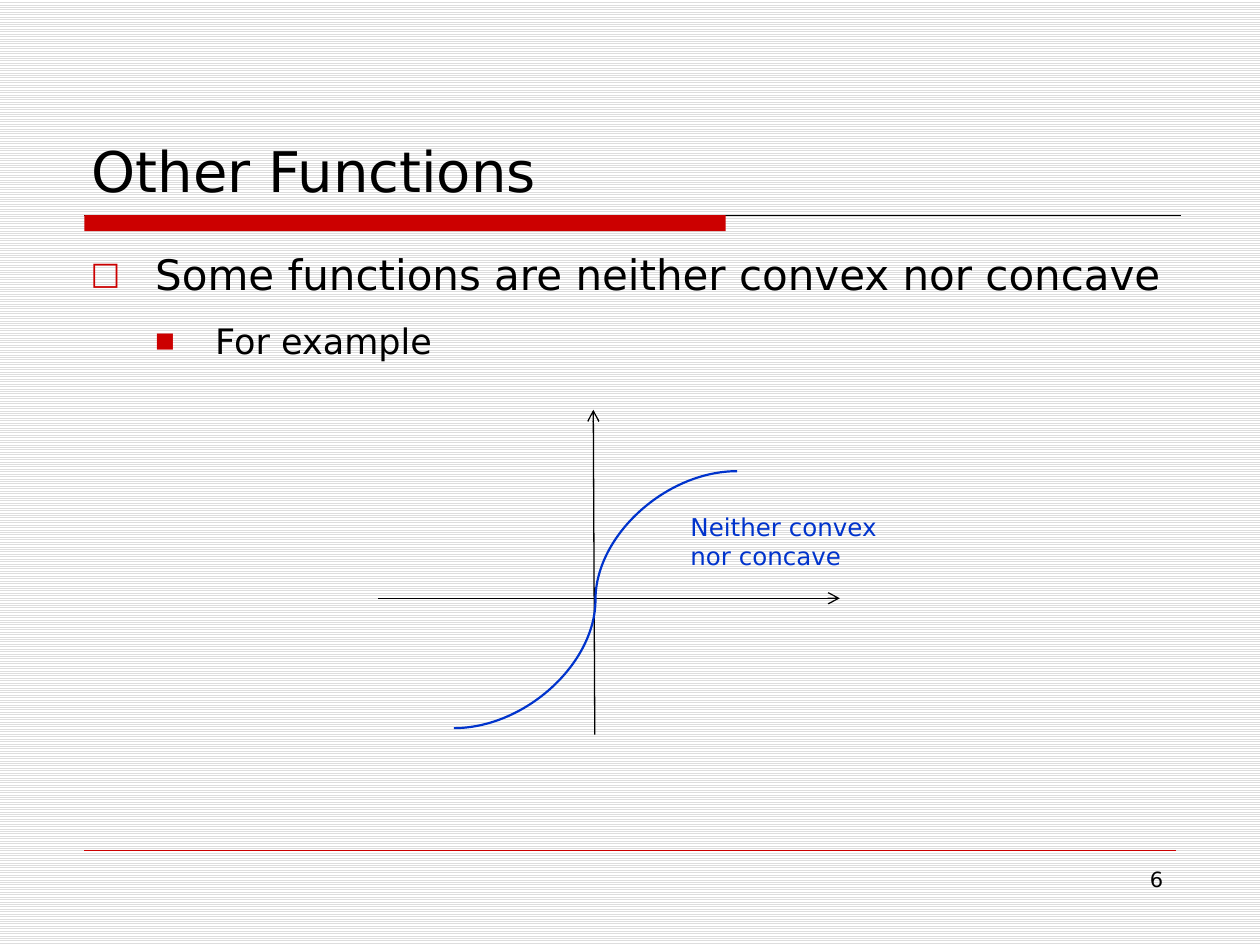
from lxml import etree
from pptx import Presentation
from pptx.dml.color import RGBColor
from pptx.enum.dml import MSO_PATTERN
from pptx.enum.shapes import MSO_CONNECTOR, MSO_SHAPE
from pptx.enum.text import MSO_ANCHOR, PP_ALIGN
from pptx.oxml.ns import qn
from pptx.util import Cm, Pt

STRAIGHT, CURVE = MSO_CONNECTOR.STRAIGHT, MSO_CONNECTOR.CURVE
RECTANGLE = MSO_SHAPE.RECTANGLE
TOP, BOTTOM = MSO_ANCHOR.TOP, MSO_ANCHOR.BOTTOM
LEFT, RIGHT = PP_ALIGN.LEFT, PP_ALIGN.RIGHT
STRIPES = MSO_PATTERN.LIGHT_HORIZONTAL

FONT = "DejaVu Sans"
BLACK = RGBColor(0x00, 0x00, 0x00)
WHITE = RGBColor(0xFF, 0xFF, 0xFF)
GREY = RGBColor(0xDD, 0xDD, 0xDD)
RED = RGBColor(0xCC, 0x00, 0x00)
BLUE = RGBColor(0x00, 0x33, 0xCC)


def add_run(p, text, size, color=BLACK):
    r = p.add_run()
    r.text = text
    r.font.name = FONT
    r.font.size = Pt(size)
    r.font.color.rgb = color


def add_box(slide, left, top, width, height, anchor=TOP):
    sp = slide.shapes.add_textbox(Cm(left), Cm(top), Cm(width), Cm(height))
    tf = sp.text_frame
    tf.word_wrap = True
    tf.vertical_anchor = anchor
    return tf


def add_label(slide, box, text, size, color=BLACK, align=LEFT, anchor=TOP):
    p = add_box(slide, *box, anchor).paragraphs[0]
    p.alignment = align
    add_run(p, text, size, color)


def add_bullet(p, text, size, char, percent, margin, hanging, before):
    p.space_before = Pt(before)
    pPr = p._p.get_or_add_pPr()
    pPr.set("marL", str(Cm(margin)))
    pPr.set("indent", str(-Cm(hanging)))
    color = etree.SubElement(pPr, qn("a:buClr"))
    etree.SubElement(color, qn("a:srgbClr"), val=str(RED))
    etree.SubElement(pPr, qn("a:buSzPct"), val=str(percent * 1000))
    etree.SubElement(pPr, qn("a:buFont"), typeface=FONT)
    etree.SubElement(pPr, qn("a:buChar"), char=char)
    add_run(p, text, size)


def add_line(slide, start, end, color, width, kind=STRAIGHT, arrow=False):
    line = slide.shapes.add_connector(kind, *map(Cm, start + end))
    line.line.color.rgb = color
    line.line.width = Pt(width)
    if arrow:
        etree.SubElement(line.line._get_or_add_ln(), qn("a:tailEnd"), type="arrow")
    etree.SubElement(line._element.spPr, qn("a:effectLst"))


def add_bar(slide, left, top, width, height):
    sp = slide.shapes.add_shape(RECTANGLE, Cm(left), Cm(top), Cm(width), Cm(height))
    sp.shadow.inherit = False
    sp.fill.solid()
    sp.fill.fore_color.rgb = RED
    sp.line.fill.background()


def main():
    prs = Presentation()
    prs.slide_width, prs.slide_height = Cm(25.4), Cm(19.05)
    slide = prs.slides.add_slide(prs.slide_layouts[6])

    # Striped background
    fill = slide.background.fill
    fill.patterned()
    fill.pattern = STRIPES
    fill.fore_color.rgb = GREY
    fill.back_color.rgb = WHITE

    # Title with its rule, footer rule and page number
    add_line(slide, (1.7, 4.34), (23.8, 4.34), BLACK, 0.75)
    add_bar(slide, 1.7, 4.34, 12.93, 0.32)
    add_line(slide, (1.7, 17.14), (23.7, 17.14), RED, 0.25)
    add_label(slide, (1.6, 0.85, 22.23, 3.38), "Other Functions", 32, anchor=BOTTOM)
    add_label(slide, (18.2, 17.35, 5.5, 1.32), "6", 12, align=RIGHT)

    # Bullets
    tf = add_box(slide, 1.58, 4.88, 22.75, 4.25)
    add_bullet(tf.paragraphs[0], "Some functions are neither convex nor concave",
               24, "□", 75, 1.3, 1.3, 4.8)
    p = tf.add_paragraph()
    p.level = 1
    add_bullet(p, "For example", 20, "■", 60, 2.51, 1.21, 12)

    # Axes, curve and its label
    add_line(slide, (7.62, 12.06), (16.93, 12.06), BLACK, 0.75, arrow=True)
    add_line(slide, (11.99, 14.81), (11.96, 8.26), BLACK, 0.75, arrow=True)
    add_line(slide, (9.15, 14.68), (14.86, 9.5), BLUE, 1.25, kind=CURVE)
    add_label(slide, (13.67, 10.19, 4.29, 1.45), "Neither convex nor concave", 14, BLUE)

    prs.save("out.pptx")


if __name__ == "__main__":
    main()
